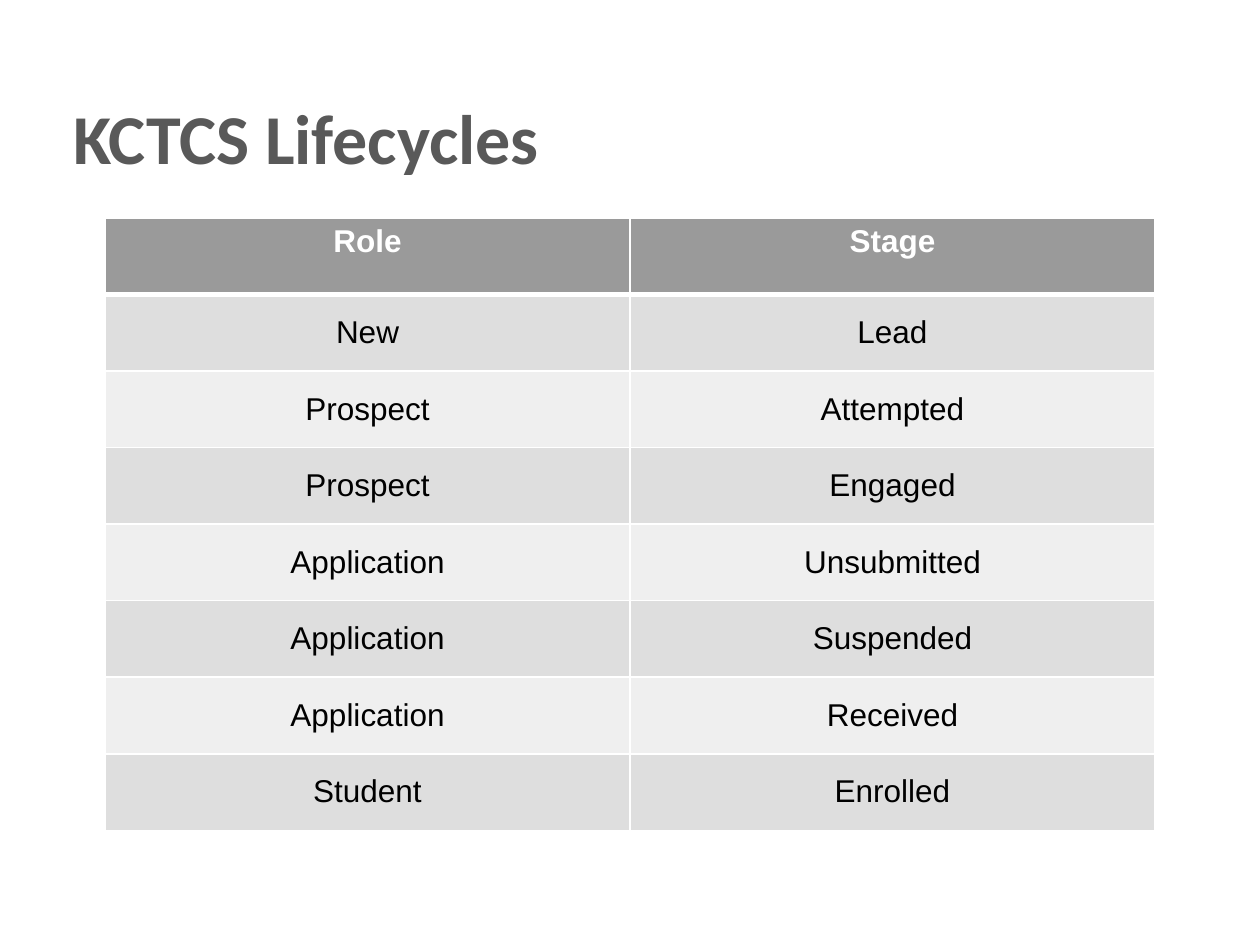
from typing import NamedTuple

from lxml import etree
from pptx import Presentation
from pptx import util as u
from pptx.dml.color import RGBColor
from pptx.enum import text
from pptx.oxml import ns

WIDTH, HEIGHT = u.Inches(10), u.Inches(7.5)
WHITE = RGBColor(0xFF, 0xFF, 0xFF)
BLACK = RGBColor(0x00, 0x00, 0x00)
TITLE_GRAY = RGBColor(0x59, 0x59, 0x59)
HEADER_GRAY = RGBColor(0x9A, 0x9A, 0x9A)
BANDS = (RGBColor(0xEF, 0xEF, 0xEF), RGBColor(0xDE, 0xDE, 0xDE))


class Lifecycle(NamedTuple):
    role: str
    stage: str


HEADER = Lifecycle("Role", "Stage")
LIFECYCLES = (
    Lifecycle("New", "Lead"),
    Lifecycle("Prospect", "Attempted"),
    Lifecycle("Prospect", "Engaged"),
    Lifecycle("Application", "Unsubmitted"),
    Lifecycle("Application", "Suspended"),
    Lifecycle("Application", "Received"),
    Lifecycle("Student", "Enrolled"),
)


def write(tf, content: str, *, size: float, font: str, color: RGBColor,
          bold: bool = False, align=text.PP_ALIGN.LEFT) -> None:
    p = tf.paragraphs[0]
    p.alignment = align
    r = p.add_run()
    r.text = content
    r.font.size = u.Pt(size)
    r.font.name = font
    r.font.bold = bold
    r.font.color.rgb = color


def add_border(cell, side: str, points: float) -> None:
    tc_pr = cell._tc.get_or_add_tcPr()
    line = etree.SubElement(tc_pr, ns.qn(f"a:ln{side}"), w=str(u.Pt(points)))
    fill = etree.SubElement(line, ns.qn("a:solidFill"))
    etree.SubElement(fill, ns.qn("a:srgbClr"), val=str(WHITE))


def draw_cell(cell, content: str, row: int) -> None:
    is_header = row == 0
    widths = {"L": 1, "R": 1, "T": 3 if row == 1 else 1, "B": 3 if is_header else 1}
    for side, points in widths.items():
        add_border(cell, side, points)
    cell.fill.solid()
    cell.fill.fore_color.rgb = HEADER_GRAY if is_header else BANDS[row % 2]
    cell.vertical_anchor = text.MSO_ANCHOR.TOP if is_header else text.MSO_ANCHOR.MIDDLE
    write(cell.text_frame, content, size=18, font="Arial", bold=is_header,
          color=WHITE if is_header else BLACK, align=text.PP_ALIGN.CENTER)


def draw_title(s, content: str) -> None:
    sp = s.shapes.add_textbox(u.Inches(0.58), u.Inches(0.42),
                              u.Inches(7.83), u.Inches(1.33))
    tf = sp.text_frame
    tf.word_wrap = True
    tf.vertical_anchor = text.MSO_ANCHOR.MIDDLE
    tf.margin_left = tf.margin_right = tf.margin_top = tf.margin_bottom = 0
    write(tf, content, size=40, font="Calibri", color=TITLE_GRAY, bold=True)


def draw_table(s, rows: tuple[Lifecycle, ...]) -> None:
    left = WIDTH // 12
    table = s.shapes.add_table(len(rows), len(HEADER), left, u.Inches(1.73),
                               WIDTH - 2 * left, u.Inches(4.86)).table
    for i, lifecycle in enumerate(rows):
        for j, content in enumerate(lifecycle):
            draw_cell(table.cell(i, j), content, i)


def main() -> None:
    prs = Presentation()
    prs.slide_width, prs.slide_height = WIDTH, HEIGHT
    s = prs.slides.add_slide(prs.slide_layouts[6])
    draw_title(s, "KCTCS Lifecycles")
    draw_table(s, (HEADER, *LIFECYCLES))
    prs.save("out.pptx")


if __name__ == "__main__":
    main()
